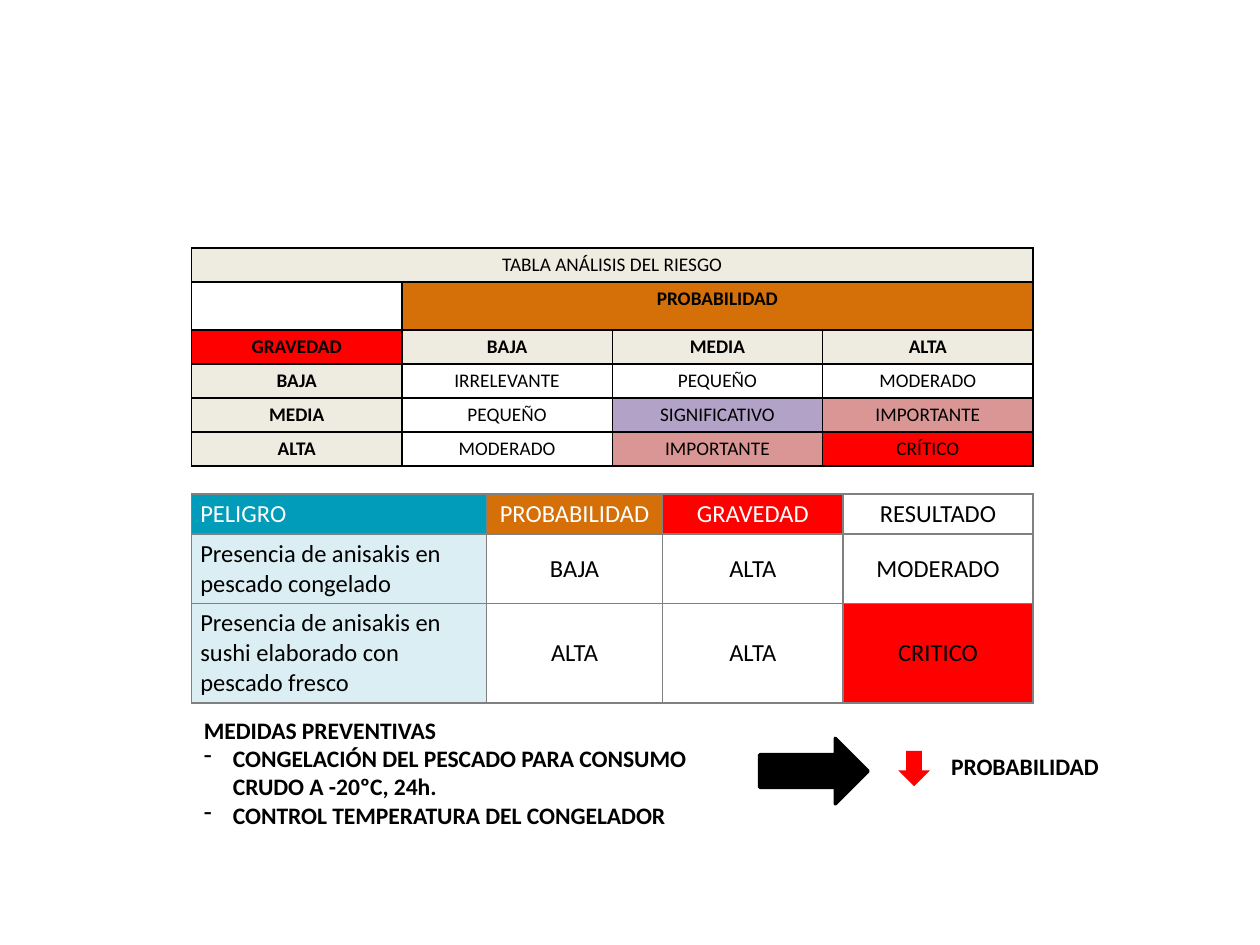
from dataclasses import dataclass
from typing import Any

from lxml.etree import SubElement
from pptx import Presentation
from pptx.dml.color import RGBColor
from pptx.enum.shapes import MSO_SHAPE
from pptx.enum.text import MSO_ANCHOR, MSO_AUTO_SIZE, PP_ALIGN
from pptx.oxml.ns import qn
from pptx.util import Inches, Pt

BLACK = RGBColor(0x00, 0x00, 0x00)
WHITE = RGBColor(0xFF, 0xFF, 0xFF)
GRAY = RGBColor(0x80, 0x80, 0x80)
RED = RGBColor(0xFF, 0x00, 0x00)
ORANGE = RGBColor(0xD4, 0x70, 0x07)
TEAL = RGBColor(0x00, 0x9C, 0xB9)
PALE_BLUE = RGBColor(0xDB, 0xEE, 0xF4)
CREAM = RGBColor(0xEE, 0xEC, 0xE1)
PURPLE = RGBColor(0xB3, 0xA2, 0xC7)
PINK = RGBColor(0xD9, 0x96, 0x94)

RISK_ROWS = [
    [("TABLA ANÁLISIS DEL RIESGO", CREAM), None, None, None],
    [("", WHITE), ("PROBABILIDAD", ORANGE), None, None],
    [("GRAVEDAD", RED), ("BAJA", CREAM), ("MEDIA", CREAM), ("ALTA", CREAM)],
    [("BAJA", CREAM), ("IRRELEVANTE", WHITE), ("PEQUEÑO", WHITE), ("MODERADO", WHITE)],
    [("MEDIA", CREAM), ("PEQUEÑO", WHITE), ("SIGNIFICATIVO", PURPLE), ("IMPORTANTE", PINK)],
    [("ALTA", CREAM), ("MODERADO", WHITE), ("IMPORTANTE", PINK), ("CRÍTICO", RED)],
]
HAZARD_ROWS = [
    [("PELIGRO", TEAL), ("PROBABILIDAD", ORANGE), ("GRAVEDAD", RED), ("RESULTADO", WHITE)],
    [("Presencia de anisakis en pescado congelado", PALE_BLUE),
     ("BAJA", WHITE), ("ALTA", WHITE), ("MODERADO", WHITE)],
    [("Presencia de anisakis en sushi elaborado con pescado fresco", PALE_BLUE),
     ("ALTA", WHITE), ("ALTA", WHITE), ("CRITICO", RED)],
]


def write(p, text, *, size, font="Calibri", color=BLACK, bold=False,
          align=PP_ALIGN.LEFT, bullet=None):
    p.alignment = align
    if bullet:
        pPr = p._p.get_or_add_pPr()
        pPr.set("marL", str(Inches(0.23)))
        pPr.set("indent", str(Inches(-0.23)))
        SubElement(pPr, qn("a:buChar")).set("char", bullet)
    r = p.add_run()
    r.text = text
    r.font.name = font
    r.font.size = Pt(size)
    r.font.bold = bold
    r.font.color.rgb = color


def risk_format(row, col):
    return dict(size=11, bold=row in (1, 2) or (col == 0 and row > 0),
                align=PP_ALIGN.CENTER)


def hazard_format(row, col):
    return dict(size=14, color=WHITE if row == 0 and col < 3 else BLACK,
                align=PP_ALIGN.CENTER if col else PP_ALIGN.LEFT)


@dataclass
class Builder:
    s: Any
    label_size: float = 13.5
    border_width: float = 1

    def border(self, cell, color):
        tcPr = cell._tc.get_or_add_tcPr()
        for side in ("a:lnL", "a:lnR", "a:lnT", "a:lnB"):
            ln = SubElement(tcPr, qn(side), w=str(Pt(self.border_width)))
            fill = SubElement(ln, qn("a:solidFill"))
            SubElement(fill, qn("a:srgbClr"), val=str(color))

    def table(self, x, y, widths, heights, rows, style, line, anchor):
        frame = self.s.shapes.add_table(
            len(rows), len(widths), Inches(x), Inches(y),
            Inches(sum(widths)), Inches(sum(heights)))
        table = frame.table
        table.first_row = table.horz_banding = False
        for column, width in zip(table.columns, widths):
            column.width = Inches(width)
        for i, (row, height) in enumerate(zip(rows, heights)):
            table.rows[i].height = Inches(height)
            for j, content in enumerate(row):
                cell = table.cell(i, j)
                self.border(cell, line)
                if content is None:
                    continue
                end = j
                while end + 1 < len(row) and row[end + 1] is None:
                    end += 1
                if end > j:
                    cell.merge(table.cell(i, end))
                text, fill = content
                cell.margin_left = cell.margin_right = Inches(0.07)
                cell.margin_top = cell.margin_bottom = Inches(0.04)
                cell.vertical_anchor = anchor
                cell.fill.solid()
                cell.fill.fore_color.rgb = fill
                write(cell.text_frame.paragraphs[0], text, **style(i, j))

    def label(self, x, y, w, h, lines):
        sp = self.s.shapes.add_textbox(Inches(x), Inches(y), Inches(w), Inches(h))
        sp.fill.solid()
        sp.fill.fore_color.rgb = WHITE
        tf = sp.text_frame
        tf.word_wrap = True
        tf.auto_size = MSO_AUTO_SIZE.SHAPE_TO_FIT_TEXT
        for i, (text, bullet) in enumerate(lines):
            p = tf.add_paragraph() if i else tf.paragraphs[0]
            write(p, text, size=self.label_size, bold=True, bullet=bullet)

    def arrow(self, kind, x, y, w, h, color, line_width=0):
        sp = self.s.shapes.add_shape(kind, Inches(x), Inches(y), Inches(w), Inches(h))
        sp.shadow.inherit = False
        sp.fill.solid()
        sp.fill.fore_color.rgb = color
        if line_width:
            sp.line.color.rgb = color
            sp.line.width = Pt(line_width)
        else:
            sp.line.fill.background()


def main():
    prs = Presentation()
    prs.slide_width, prs.slide_height = Inches(10), Inches(7.5)
    b = Builder(prs.slides.add_slide(prs.slide_layouts[6]))
    b.table(1.52, 3.92, [2.34, 1.4, 1.43, 1.51], [0.31, 0.55, 0.79],
            HAZARD_ROWS, hazard_format, GRAY, MSO_ANCHOR.MIDDLE)
    b.label(1.52, 5.63, 4.51, 1.01, [
        ("MEDIDAS PREVENTIVAS", None),
        ("CONGELACIÓN DEL PESCADO PARA CONSUMO CRUDO A -20ºC, 24h.", "-"),
        ("CONTROL TEMPERATURA DEL CONGELADOR", "-"),
    ])
    b.arrow(MSO_SHAPE.RIGHT_ARROW, 6.03, 5.86, 0.86, 0.52, BLACK, line_width=2)
    b.label(7.45, 5.92, 1.76, 0.33, [("PROBABILIDAD", None)])
    b.arrow(MSO_SHAPE.DOWN_ARROW, 7.13, 5.96, 0.25, 0.28, RED)
    b.table(1.52, 1.97, [1.67] * 4, [0.27, 0.34] + [0.27] * 4,
            RISK_ROWS, risk_format, BLACK, MSO_ANCHOR.TOP)
    prs.save("out.pptx")


if __name__ == "__main__":
    main()
